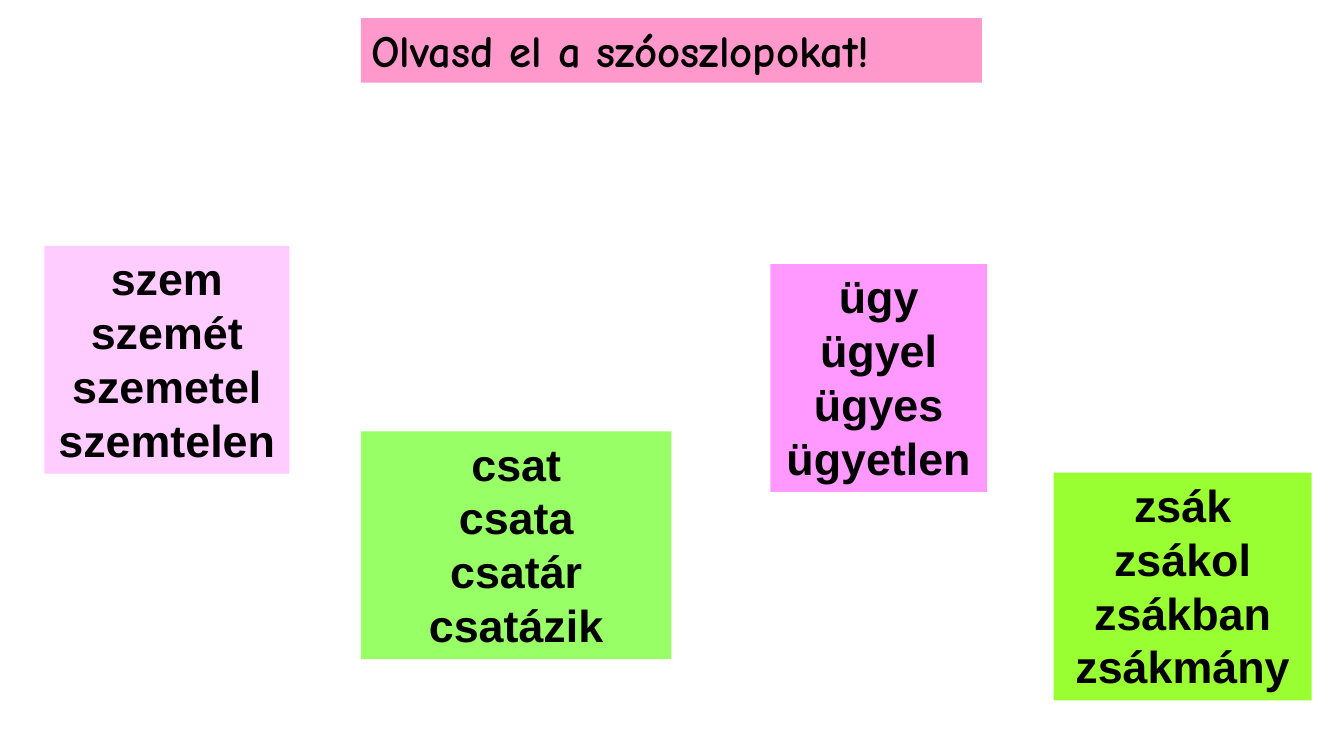
from pptx import Presentation
from pptx.dml.color import RGBColor
from pptx.enum.shapes import MSO_SHAPE
from pptx.enum.text import MSO_ANCHOR, MSO_AUTO_SIZE, PP_ALIGN
from pptx.util import Inches, Pt

BLACK = RGBColor(0x00, 0x00, 0x00)
ROSE = RGBColor(0xFF, 0x99, 0xCC)
PALE_PINK = RGBColor(0xFF, 0xCC, 0xFF)
GREEN = RGBColor(0x99, 0xFF, 0x66)
PINK = RGBColor(0xFF, 0x99, 0xFF)
LIME = RGBColor(0x99, 0xFF, 0x33)

COLUMN_HEIGHT = 2.26
WORD_COLUMNS = [
    (0.44, 2.44, 2.43, PALE_PINK, ["szem", "szemét", "szemetel", "szemtelen"]),
    (3.58, 4.28, 3.08, GREEN, ["csat", "csata", "csatár", "csatázik"]),
    (7.64, 2.62, 2.15, PINK, ["ügy", "ügyel", "ügyes", "ügyetlen"]),
    (10.45, 4.69, 2.56, LIME, ["zsák", "zsákol", "zsákban", "zsákmány"]),
]


def fill_box(sp, color, lines, font_name, align):
    sp.fill.solid()
    sp.fill.fore_color.rgb = color
    sp.line.fill.background()
    tf = sp.text_frame
    tf.word_wrap = True
    tf.auto_size = MSO_AUTO_SIZE.NONE
    tf.vertical_anchor = MSO_ANCHOR.TOP
    tf.text = "\n".join(lines)
    for p in tf.paragraphs:
        p.alignment = align
        p.font.name = font_name
        p.font.size = Pt(32)
        p.font.bold = True
        p.font.color.rgb = BLACK


def add_title(s, text):
    sp = s.shapes.title
    sp.left, sp.top = Inches(3.58), Inches(0.18)
    sp.width, sp.height = Inches(6.16), Inches(0.64)
    fill_box(sp, ROSE, [text], "Comic Neue", PP_ALIGN.LEFT)


def add_word_column(s, left, top, width, color, words):
    sp = s.shapes.add_shape(MSO_SHAPE.RECTANGLE, Inches(left), Inches(top),
                            Inches(width), Inches(COLUMN_HEIGHT))
    sp.shadow.inherit = False
    fill_box(sp, color, words, "Arial", PP_ALIGN.CENTER)


def main():
    prs = Presentation()
    prs.slide_width, prs.slide_height = Inches(13.33), Inches(7.5)
    s = prs.slides.add_slide(prs.slide_layouts[5])
    add_title(s, "Olvasd el a szóoszlopokat!")
    for column in WORD_COLUMNS:
        add_word_column(s, *column)
    prs.save("out.pptx")


if __name__ == "__main__":
    main()
